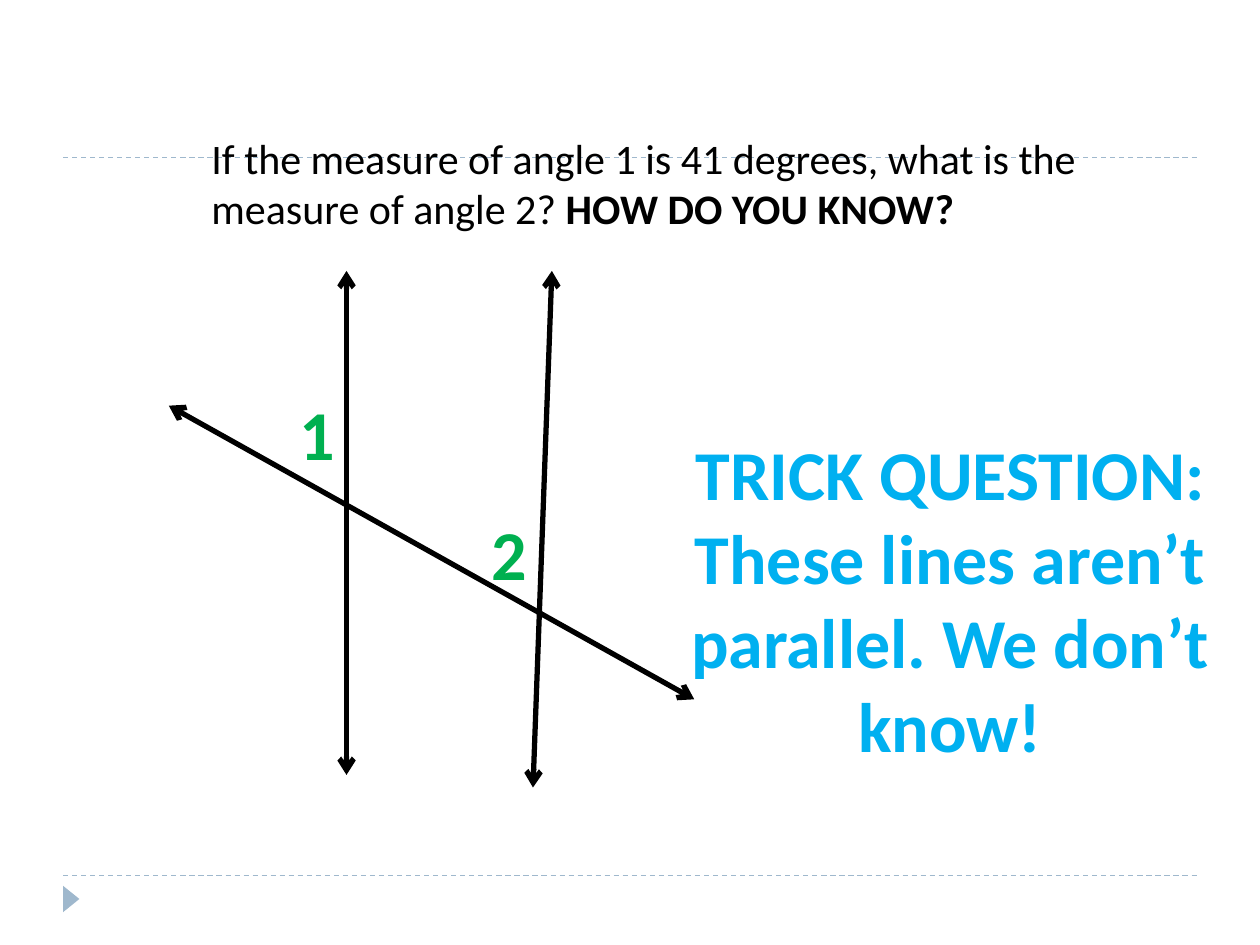
"""Build a geometry slide asking about the angles made by a transversal."""
from lxml import etree
from pptx import Presentation
from pptx import util as u
from pptx.dml.color import RGBColor
from pptx.enum import dml, shapes, text
from pptx.oxml.ns import qn

BLACK = RGBColor(0x00, 0x00, 0x00)
GREEN = RGBColor(0x00, 0xB0, 0x50)
BLUE = RGBColor(0x00, 0xB0, 0xF0)
GREY_BLUE = RGBColor(0x9F, 0xB8, 0xCD)


class SlideBuilder:
    font_name = "Calibri"

    def __init__(self, slide):
        self.slide = slide

    def line(self, start, end, color, width):
        points = [u.Inches(value) for value in (*start, *end)]
        connector = self.slide.shapes.add_connector(
            shapes.MSO_CONNECTOR.STRAIGHT, *points)
        connector.line.color.rgb = color
        connector.line.width = u.Pt(width)
        etree.SubElement(connector._element.spPr, qn("a:effectLst"))
        return connector

    def rule(self, top):
        connector = self.line((0.5, top), (9.5, top), GREY_BLUE, 0.75)
        connector.line.dash_style = dml.MSO_LINE.DASH

    def double_arrow(self, start, end):
        connector = self.line(start, end, BLACK, 3)
        outline = connector.line._get_or_add_ln()
        for tag in ("a:headEnd", "a:tailEnd"):
            etree.SubElement(outline, qn(tag), type="arrow")

    def marker(self, left, top, width, height):
        shape = self.slide.shapes.add_shape(
            shapes.MSO_SHAPE.ISOSCELES_TRIANGLE,
            *map(u.Inches, (left, top, width, height)))
        shape.rotation = 90
        shape.shadow.inherit = False
        shape.fill.solid()
        shape.fill.fore_color.rgb = GREY_BLUE
        shape.line.fill.background()

    def text(self, box, runs, size, color, align=text.PP_ALIGN.LEFT):
        shape = self.slide.shapes.add_textbox(*map(u.Inches, box))
        shape.text_frame.word_wrap = True
        paragraph = shape.text_frame.paragraphs[0]
        paragraph.alignment = align
        for words, bold in runs:
            run = paragraph.add_run()
            run.text = words
            run.font.name = self.font_name
            run.font.size = u.Pt(size)
            run.font.bold = bold
            run.font.color.rgb = color


def main():
    presentation = Presentation()
    presentation.slide_width = u.Inches(10)
    presentation.slide_height = u.Inches(7.5)
    builder = SlideBuilder(
        presentation.slides.add_slide(presentation.slide_layouts[6]))

    for top in (6.95, 1.25):
        builder.rule(top)
    builder.marker(0.46, 7.07, 0.21, 0.13)

    left_line = ((2.75, 6.15), (2.75, 2.15))
    transversal = ((5.51, 5.55), (1.34, 3.22))
    right_line = ((4.23, 6.25), (4.38, 2.15))
    for start, end in (left_line, transversal, right_line):
        builder.double_arrow(start, end)

    for label, left, top in (("1", 2.28, 3.05), ("2", 3.8, 4)):
        builder.text((left, top, 0.67, 0.77), [(label, True)], 40, GREEN)

    question = [
        ("If the measure of angle 1 is 41 degrees, "
         "what is the measure of angle 2? ", False),
        ("HOW DO YOU KNOW?", True),
    ]
    builder.text((1.58, 1, 7.33, 0.91), question, 24, BLACK)

    answer = "TRICK QUESTION: These lines aren’t parallel. We don’t know!"
    builder.text((5, 3.37, 5.08, 3.47), [(answer, True)], 40, BLUE,
                 text.PP_ALIGN.CENTER)

    presentation.save("out.pptx")


if __name__ == "__main__":
    main()
